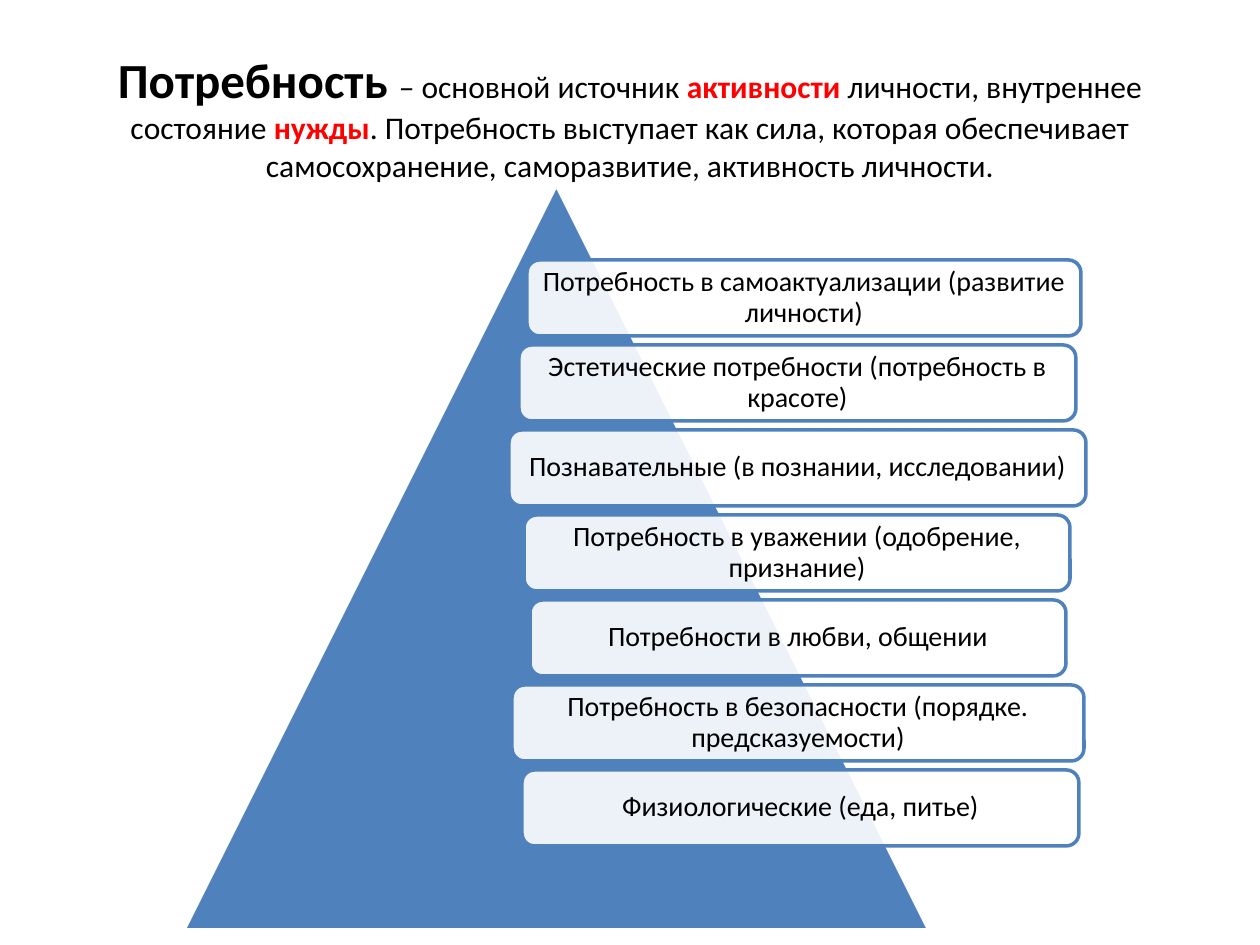
from lxml import etree
from pptx import Presentation
from pptx.dml.color import RGBColor
from pptx.enum.shapes import MSO_SHAPE
from pptx.enum.text import MSO_ANCHOR, PP_ALIGN
from pptx.oxml.ns import qn
from pptx.util import Pt

TRIANGLE, ROUNDED = MSO_SHAPE.ISOSCELES_TRIANGLE, MSO_SHAPE.ROUNDED_RECTANGLE
MIDDLE, CENTER = MSO_ANCHOR.MIDDLE, PP_ALIGN.CENTER
BLACK = RGBColor(0, 0, 0)
WHITE = RGBColor(255, 255, 255)
RED = RGBColor(255, 0, 0)
BLUE = RGBColor(0x4F, 0x81, 0xBD)
FONT = "Calibri"
SCALE = 914400 / 126

TITLE = [
    ("Потребность ", 28, BLACK, True),
    ("– основной источник ", 18, BLACK, False),
    ("активности ", 18, RED, True),
    ("личности, внутреннее состояние ", 18, BLACK, False),
    ("нужды", 18, RED, True),
    (". Потребность выступает как сила, которая обеспечивает самосохранение, "
     "саморазвитие, активность личности.", 18, BLACK, False),
]
NEEDS = [
    ("Потребность в самоактуализации (развитие личности)", 527, 554),
    ("Эстетические потребности (потребность в красоте)", 519, 557),
    ("Познавательные (в познании, исследовании)", 509, 577),
    ("Потребность в уважении (одобрение, признание)", 524, 546),
    ("Потребности в любви, общении", 530, 536),
    ("Потребность в безопасности (порядке. предсказуемости)", 512, 572),
    ("Физиологические (еда, питье)", 522, 557),
]
NEED_TOP, NEED_STEP, NEED_HEIGHT, NEED_INSET = 260, 85, 76, 9


def px(n):
    return round(n * SCALE)


def add_shape(slide, kind, box, fill, line, opacity=100):
    sp = slide.shapes.add_shape(kind, *map(px, box))
    sp.shadow.inherit = False
    sp.fill.solid()
    sp.fill.fore_color.rgb = fill
    if opacity < 100:
        color = sp.fill._xPr.find(qn("a:solidFill"))[0]
        etree.SubElement(color, qn("a:alpha"), val=str(opacity * 1000))
    sp.line.color.rgb = line
    sp.line.width = Pt(2)
    return sp


def write_text(sp, runs, spacing=1.0, inset=None):
    tf = sp.text_frame
    tf.word_wrap = True
    tf.vertical_anchor = MIDDLE
    if inset is not None:
        tf.margin_left = tf.margin_right = px(inset)
        tf.margin_top = tf.margin_bottom = px(inset)
    p = tf.paragraphs[0]
    p.alignment = CENTER
    p.line_spacing = spacing
    for text, size, color, bold in runs:
        r = p.add_run()
        r.text = text
        r.font.name = FONT
        r.font.size = Pt(size)
        r.font.bold = bold
        r.font.color.rgb = color


prs = Presentation()
prs.slide_width, prs.slide_height = px(1260), px(945)
s = prs.slides.add_slide(prs.slide_layouts[6])

title = s.shapes.add_textbox(*map(px, (63, 38, 1134, 157)))
write_text(title, TITLE)

add_shape(s, TRIANGLE, (184, 185, 745, 745), BLUE, WHITE)

for i, (need, left, width) in enumerate(NEEDS):
    box = (left, NEED_TOP + i * NEED_STEP, width, NEED_HEIGHT)
    sp = add_shape(s, ROUNDED, box, WHITE, BLUE, opacity=90)
    write_text(sp, [(need, 16, BLACK, False)], spacing=0.9, inset=NEED_INSET)

prs.save("out.pptx")
